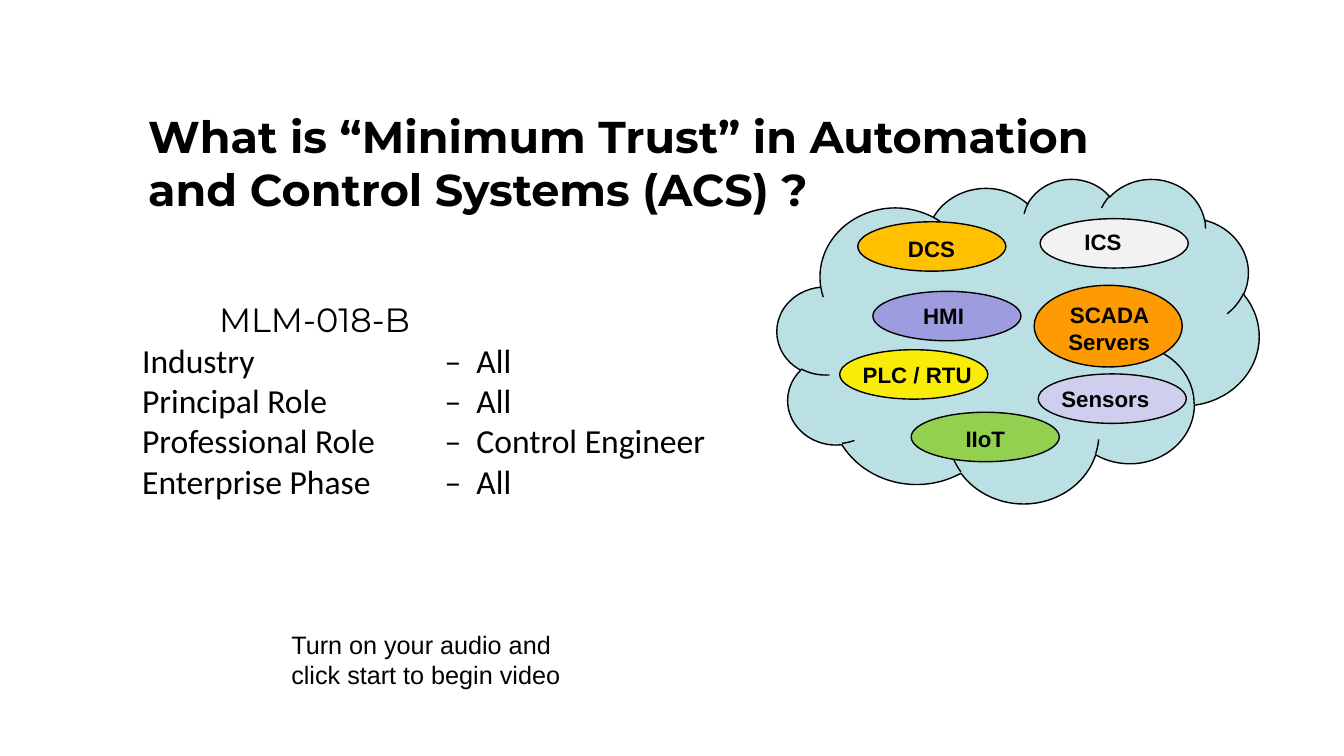
"""Build the title slide on minimum trust in automation and control systems."""
from lxml import etree
from pptx import Presentation
from pptx.dml.color import RGBColor
from pptx.enum.shapes import MSO_SHAPE
from pptx.enum.text import MSO_ANCHOR, PP_ALIGN
from pptx.oxml.ns import qn
from pptx.util import Pt

CLOUD, OVAL = MSO_SHAPE.CLOUD, MSO_SHAPE.OVAL
LEFT, CENTER = PP_ALIGN.LEFT, PP_ALIGN.CENTER
TOP = MSO_ANCHOR.TOP

THEME = {
    "ink": "000000", "cloud": "BBE0E3", "plc": "F9ED07", "sensors": "CECEEF",
    "scada": "FE9B03", "hmi": "9C9CDF", "iiot": "92D050", "dcs": "FFC000", "ics": "F2F2F2",
    "title": {"name": "Montserrat", "size": Pt(31.8), "bold": True},
    "code": {"name": "Montserrat", "size": Pt(24)},
    "body": {"name": "Calibri", "size": Pt(24)},
    "label": {"name": "Arial", "size": Pt(15.9), "bold": True},
    "note": {"name": "Arial", "size": Pt(18)},
}

prs = Presentation()
prs.slide_width, prs.slide_height = Pt(960), Pt(540)
s = prs.slides.add_slide(prs.slide_layouts[6])


def add_blob(kind, box, fill):
    sp = s.shapes.add_shape(kind, *map(Pt, box))
    sp.shadow.inherit = False
    sp.fill.solid()
    sp.fill.fore_color.rgb = RGBColor.from_string(THEME[fill])
    sp.line.color.rgb = RGBColor.from_string(THEME["ink"])
    sp.line.width = Pt(1)


def add_text(box, lines, inset=(0, 0), wrap=True, align=LEFT, tab=None, indent=0):
    tf = s.shapes.add_textbox(*map(Pt, box)).text_frame
    x, y = map(Pt, inset)
    frame = {"margin_left": x, "margin_right": x, "margin_top": y, "margin_bottom": y,
             "word_wrap": wrap, "vertical_anchor": TOP}
    for name, value in frame.items():
        setattr(tf, name, value)
    for i, (text, style) in enumerate(lines):
        p = tf.add_paragraph() if i else tf.paragraphs[0]
        p.alignment = align
        pPr = p._p.get_or_add_pPr()
        if indent and i == 0:
            pPr.set("indent", str(Pt(indent)))
        if tab and "\t" in text:
            tabs = etree.SubElement(pPr, qn("a:tabLst"))
            etree.SubElement(tabs, qn("a:tab"), pos=str(Pt(tab)), algn="l")
        r = p.add_run()
        r.text = text
        for name, value in THEME[style].items():
            setattr(r.font, name, value)
        r.font.color.rgb = RGBColor.from_string(THEME["ink"])


add_blob(CLOUD, (555.1, 127.4, 344.2, 231.8), "cloud")

OVAL_W, OVAL_H, SCADA_H = 105.8, 35.3, 58.3
systems = [
    ("PLC / RTU", "plc", (599.8, 249.8), (609.1, 254.2, 92.9)),
    ("Sensors", "sensors", (741.6, 267.1), (751, 271.4, 77.8)),
    ("SCADA Servers", "scada", (738.7, 203.8), (734.4, 211.7, 115.9)),
    ("HMI", "hmi", (623.5, 208.1), (652.3, 212.4, 43.9)),
    ("IIoT", "iiot", (650.9, 294.5), (682.6, 300.2, 43.2)),
    ("DCS", "dcs", (612.7, 158.4), (641.5, 164.2, 50.4)),
    ("ICS", "ics", (743, 156.2), (767.5, 159.8, 41)),
]
for name, fill, corner, (x, y, w) in systems:
    two_lines = fill == "scada"
    add_blob(OVAL, (*corner, OVAL_W, SCADA_H if two_lines else OVAL_H), fill)
    add_text((x, y, w, 46 if two_lines else 26.6), [(name, "label")], inset=(7.2, 3.6),
             wrap=two_lines, align=CENTER if two_lines else LEFT)

add_text((97.9, 73.4, 715, 108),
         [("What is “Minimum Trust” in Automation and Control Systems (ACS) ?", "title")],
         inset=(7.9, 4.3))

profile = [("Industry", "All"), ("Principal Role", "All"),
           ("Professional Role", "Control Engineer"), ("Enterprise Phase", "All")]
add_text((101.5, 213.8, 438.5, 160.6),
         [("MLM-018-B", "code")] + [(f"{k}\t–  {v}", "body") for k, v in profile],
         tab=216, indent=55)

add_text((208.1, 449.3, 217.4, 43.9),
         [("Turn on your audio and click start to begin video", "note")])

prs.save("out.pptx")
